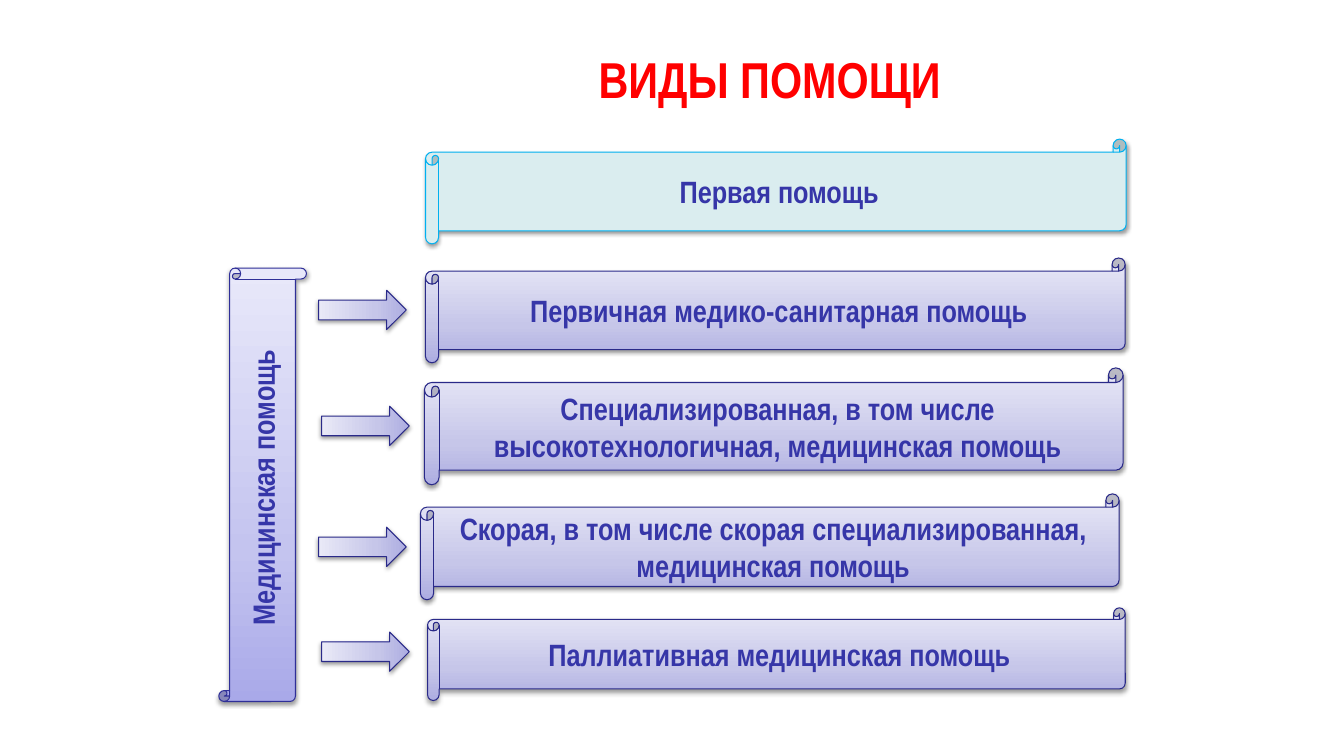
from dataclasses import dataclass

from pptx import Presentation
from pptx.dml.color import RGBColor
from pptx.enum.shapes import MSO_SHAPE
from pptx.enum.text import MSO_ANCHOR, PP_ALIGN
from pptx.oxml import parse_xml
from pptx.oxml.ns import nsdecls, qn
from pptx.util import Inches, Pt

DOWN_ARROW = MSO_SHAPE.DOWN_ARROW
HORIZONTAL_SCROLL = MSO_SHAPE.HORIZONTAL_SCROLL
VERTICAL_SCROLL = MSO_SHAPE.VERTICAL_SCROLL
CENTER = PP_ALIGN.CENTER
MIDDLE = MSO_ANCHOR.MIDDLE


@dataclass(frozen=True)
class Theme:
    font: str = "Arial Narrow"
    title_size: int = 36
    label_size: int = 22
    title: str = "FF0000"
    label: str = "3636A8"
    first_aid_fill: str = "DAEDEF"
    first_aid_line: str = "00B0F0"
    kind_fill: tuple = ("ADADE1", "C6C6E9", "E9E9F7")
    kind_line: str = "2A2A89"
    group_fill: tuple = ("A9A9E9", "C4C4EF", "E8E8FA")
    group_line: str = "2F2F98"
    shadow: str = "000000"


theme = Theme()


def write_text(shape, text, size, color):
    frame = shape.text_frame
    frame.text = text
    frame.word_wrap = True
    frame.vertical_anchor = MIDDLE
    paragraph = frame.paragraphs[0]
    paragraph.alignment = CENTER
    paragraph.font.name = theme.font
    paragraph.font.size = Pt(size)
    paragraph.font.bold = True
    paragraph.font.color.rgb = RGBColor.from_string(color)


def add_block(kind, box, fill, line, text=None):
    shape = slide.shapes.add_shape(kind, *map(Inches, box))
    shape.line.color.rgb = RGBColor.from_string(line)
    shape.line.width = Pt(0.75)
    properties = shape.element.spPr
    if isinstance(fill, str):
        shape.fill.solid()
        shape.fill.fore_color.rgb = RGBColor.from_string(fill)
    else:
        stops = "".join(
            f'<a:gs pos="{position}"><a:srgbClr val="{color}"/></a:gs>'
            for position, color in zip((0, 35000, 100000), fill)
        )
        properties.find(qn("a:prstGeom")).addnext(parse_xml(
            f'<a:gradFill {nsdecls("a")} rotWithShape="1"><a:gsLst>{stops}</a:gsLst>'
            '<a:lin ang="16200000" scaled="0"/></a:gradFill>'
        ))
    shape.shadow.inherit = False
    properties.find(qn("a:effectLst")).append(parse_xml(
        f'<a:outerShdw {nsdecls("a")} blurRad="{Pt(3.1)}" dist="{Pt(1.6)}" '
        f'dir="5400000" rotWithShape="0"><a:srgbClr val="{theme.shadow}">'
        '<a:alpha val="38000"/></a:srgbClr></a:outerShdw>'
    ))
    if text:
        write_text(shape, text, theme.label_size, theme.label)
    return shape


presentation = Presentation()
presentation.slide_width = Inches(13.33)
presentation.slide_height = Inches(7.5)
slide = presentation.slides.add_slide(presentation.slide_layouts[5])

title = slide.shapes.title
title.left, title.top, title.width, title.height = map(Inches, (5.36, 0.37, 4.55, 0.81))
write_text(title, "ВИДЫ ПОМОЩИ", theme.title_size, theme.title)

group = add_block(VERTICAL_SCROLL, (2.17, 2.66, 0.87, 4.3), theme.group_fill,
                  theme.group_line, "Медицинская помощь")
group.text_frame._txBody.bodyPr.set("vert", "vert270")

add_block(HORIZONTAL_SCROLL, (4.22, 1.38, 6.95, 1.04), theme.first_aid_fill,
          theme.first_aid_line, "Первая помощь")

care_kinds = [
    ("Первичная медико-санитарная помощь", (4.22, 2.56, 6.94, 1.04), (3.4, 2.64)),
    ("Специализированная, в том числе высокотехнологичная, медицинская помощь",
     (4.21, 3.65, 6.93, 1.16), (3.43, 3.79)),
    ("Скорая, в том числе скорая специализированная, медицинская помощь",
     (4.17, 4.9, 6.93, 1.05), (3.4, 4.99)),
    ("Паллиативная медицинская помощь", (4.24, 6.03, 6.92, 0.92), (3.43, 6.03)),
]
for text, scroll_box, arrow_corner in care_kinds:
    add_block(HORIZONTAL_SCROLL, scroll_box, theme.kind_fill, theme.kind_line, text)
    arrow = add_block(DOWN_ARROW, (*arrow_corner, 0.39, 0.87), theme.kind_fill, theme.kind_line)
    arrow.rotation = 270

presentation.save("out.pptx")
